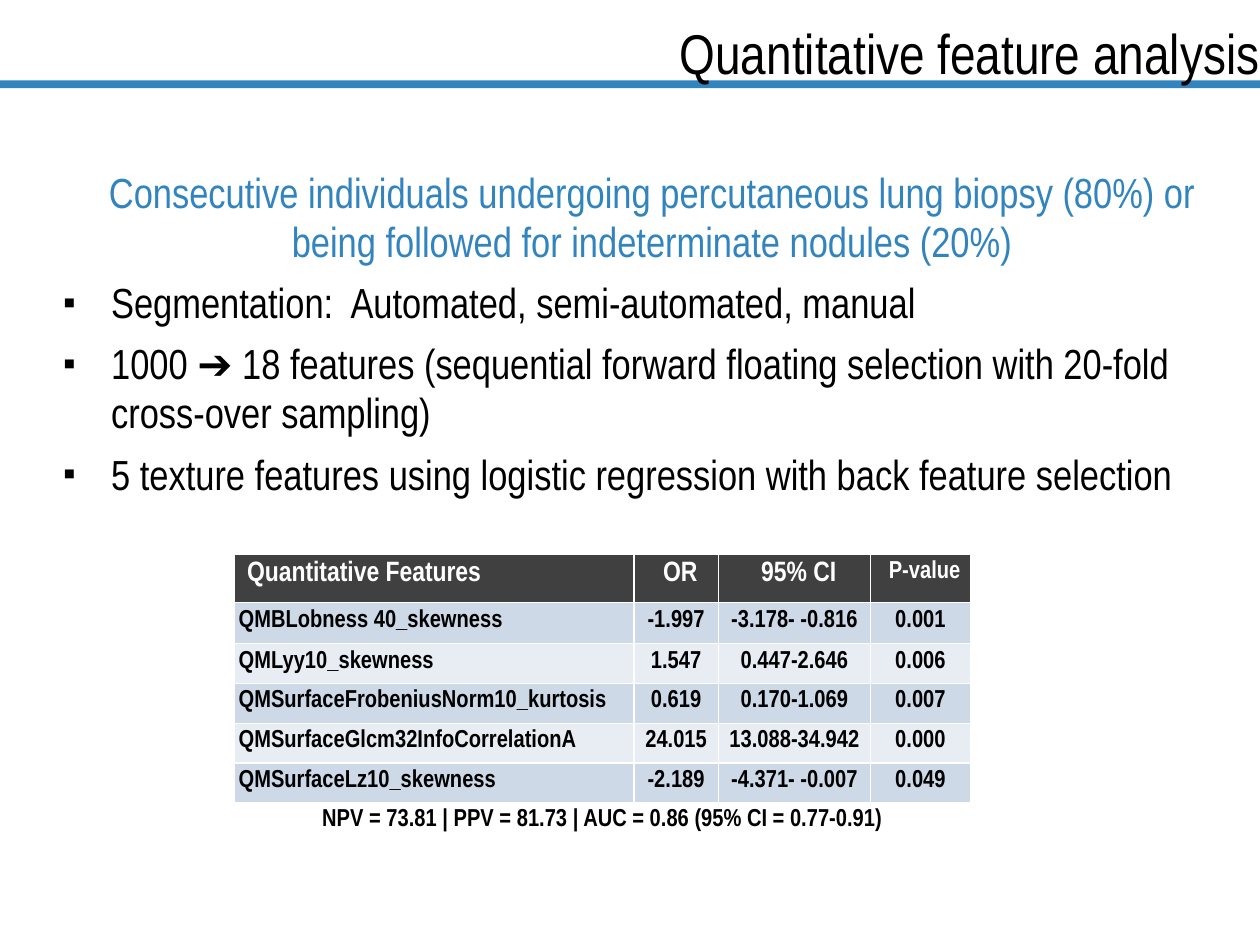
"""Build the slide on quantitative feature analysis."""
from lxml import etree
from pptx import Presentation
from pptx import util as u
from pptx.dml.color import RGBColor
from pptx.enum import shapes, text
from pptx.oxml.ns import qn

BLUE = RGBColor(0x32, 0x84, 0xBE)
BLACK = RGBColor(0, 0, 0)
WHITE = RGBColor(255, 255, 255)
CHARCOAL = RGBColor(0x40, 0x40, 0x40)
BANDS = (RGBColor(0xCE, 0xD9, 0xE8), RGBColor(0xE8, 0xED, 0xF4))

FONT = "Arial Narrow"
LEFT, CENTER, RIGHT = text.PP_ALIGN.LEFT, text.PP_ALIGN.CENTER, text.PP_ALIGN.RIGHT
NO_INSETS = dict.fromkeys(
    ("margin_left", "margin_top", "margin_right", "margin_bottom"), 0)

INTRO = ("Consecutive individuals undergoing percutaneous lung biopsy (80%) or \v"
         "being followed for indeterminate nodules (20%) ")
BULLETS = (
    "Segmentation:  Automated, semi-automated, manual",
    "1000 ➔ 18 features (sequential forward floating selection with 20-fold "
    "cross-over sampling)",
    "5 texture features using logistic regression with back feature selection",
)
HEADER = ("Quantitative Features", "OR", "95% CI", "P-value")
FEATURES = (
    ("QMBLobness 40_skewness", "-1.997", "-3.178- -0.816", "0.001"),
    ("QMLyy10_skewness", "1.547", "0.447-2.646", "0.006"),
    ("QMSurfaceFrobeniusNorm10_kurtosis", "0.619", "0.170-1.069", "0.007"),
    ("QMSurfaceGlcm32InfoCorrelationA", "24.015", "13.088-34.942", "0.000"),
    ("QMSurfaceLz10_skewness", "-2.189", "-4.371- -0.007", "0.049"),
)
SUMMARY = "NPV = 73.81 | PPV = 81.73 | AUC = 0.86 (95% CI = 0.77-0.91)"
COLUMN_WIDTHS = (8.05, 1.7, 3.07, 2.01)
ROW_HEIGHTS = (0.97, 0.83) + (0.8,) * 5


def apply(target, values):
    """Set each named attribute on the target."""
    for name, value in values.items():
        setattr(target, name, value)


def write(para, words, size, color, bold=False, **layout):
    """Fill a paragraph with words in one format."""
    para.text = words
    apply(para, layout)
    for span in para.runs:
        apply(span.font, {"name": FONT, "size": u.Pt(size), "bold": bold})
        span.font.color.rgb = color


def set_bullet(para, mark=None):
    """Give a paragraph a hanging bullet, or none."""
    props = para._p.get_or_add_pPr()
    indent = u.Cm(0.97) if mark else 0
    props.set("marL", str(indent))
    props.set("indent", str(-indent))
    if mark:
        etree.SubElement(props, qn("a:buSzPct"), val="85000")
        etree.SubElement(props, qn("a:buFont"), typeface="Arial")
        etree.SubElement(props, qn("a:buChar"), char=mark)
    else:
        etree.SubElement(props, qn("a:buNone"))


def place(box, left, top, width, height, anchor):
    """Position a placeholder and clear its insets."""
    apply(box, {"left": u.Cm(left), "top": u.Cm(top),
                "width": u.Cm(width), "height": u.Cm(height)})
    apply(box.text_frame, {**NO_INSETS, "vertical_anchor": anchor, "word_wrap": True,
                           "auto_size": text.MSO_AUTO_SIZE.NONE})


def add_bar(page):
    """Draw the blue rule behind the title."""
    bar = page.shapes.add_shape(shapes.MSO_SHAPE.RECTANGLE,
                                0, u.Cm(1.62), u.Cm(25.4), u.Cm(0.16))
    bar.shadow.inherit = False
    bar.fill.solid()
    bar.fill.fore_color.rgb = BLUE
    bar.line.fill.background()
    page.shapes._spTree.insert(2, bar._element)


def fill_title(box):
    """Write the title at the right edge."""
    place(box, 2.54, -0.13, 22.86, 1.85, text.MSO_ANCHOR.BOTTOM)
    write(box.text_frame.paragraphs[0], "Quantitative feature analysis", 32, BLACK,
          alignment=RIGHT)


def fill_body(box):
    """Write the blue introduction and the bullet list."""
    place(box, 1.27, 3.38, 23.93, 12.57, text.MSO_ANCHOR.TOP)
    frame = box.text_frame
    spacing = {"line_spacing": u.Pt(28), "space_before": u.Pt(0), "space_after": u.Pt(7)}
    intro = frame.paragraphs[0]
    write(intro, INTRO, 24, BLUE, alignment=CENTER, **spacing)
    set_bullet(intro)
    for words in BULLETS:
        para = frame.add_paragraph()
        write(para, words, 24, BLACK, alignment=LEFT, **spacing)
        set_bullet(para, "▪")


def set_borders(cell):
    """Give a cell thin white borders."""
    props = cell._tc.get_or_add_tcPr()
    for side in "LRTB":
        line = etree.SubElement(props, qn(f"a:ln{side}"), w=str(u.Pt(0.75)))
        fill = etree.SubElement(line, qn("a:solidFill"))
        etree.SubElement(fill, qn("a:srgbClr"), val=str(WHITE))


def fill_cell(cell, words, size, color, fill, alignment, insets):
    """Write and format one table cell."""
    names = ("margin_left", "margin_top", "margin_right", "margin_bottom")
    apply(cell, {name: u.Cm(inset) for name, inset in zip(names, insets)})
    set_borders(cell)
    if fill is None:
        cell.fill.background()
    else:
        cell.fill.solid()
        cell.fill.fore_color.rgb = fill
    write(cell.text_frame.paragraphs[0], words, size, color, True, alignment=alignment)


def add_feature_table(page):
    """Add the table of features with its summary row."""
    table = page.shapes.add_table(
        len(ROW_HEIGHTS), len(COLUMN_WIDTHS), u.Cm(4.73), u.Cm(11.18),
        u.Cm(sum(COLUMN_WIDTHS)), u.Cm(sum(ROW_HEIGHTS))).table
    for column, width in zip(table.columns, COLUMN_WIDTHS):
        column.width = u.Cm(width)
    for row, height in zip(table.rows, ROW_HEIGHTS):
        row.height = u.Cm(height)

    narrow = (0.08, 0.13, 0.08, 0.13)
    for c, words in enumerate(HEADER):
        insets = (0.25, 0.13, 0.08, 0.08) if c else (0.25, 0.13, 0.25, 0.13)
        fill_cell(table.cell(0, c), words, 14 if words == "P-value" else 16, WHITE,
                  CHARCOAL, CENTER if c else LEFT, insets)
    for r, feature in enumerate(FEATURES):
        for c, words in enumerate(feature):
            fill_cell(table.cell(r + 1, c), words, 14, BLACK, BANDS[r % 2],
                      CENTER if c else LEFT, narrow)
    last = len(ROW_HEIGHTS) - 1
    summary = table.cell(last, 0)
    summary.merge(table.cell(last, len(COLUMN_WIDTHS) - 1))
    fill_cell(summary, SUMMARY, 14, BLACK, None, CENTER, narrow)


def main():
    """Create the deck and save it."""
    deck = Presentation()
    apply(deck, {"slide_width": u.Cm(25.4), "slide_height": u.Cm(19.05)})
    page = deck.slides.add_slide(deck.slide_layouts[1])
    add_bar(page)
    fill_title(page.shapes.title)
    fill_body(page.placeholders[1])
    add_feature_table(page)
    deck.save("out.pptx")


if __name__ == "__main__":
    main()
